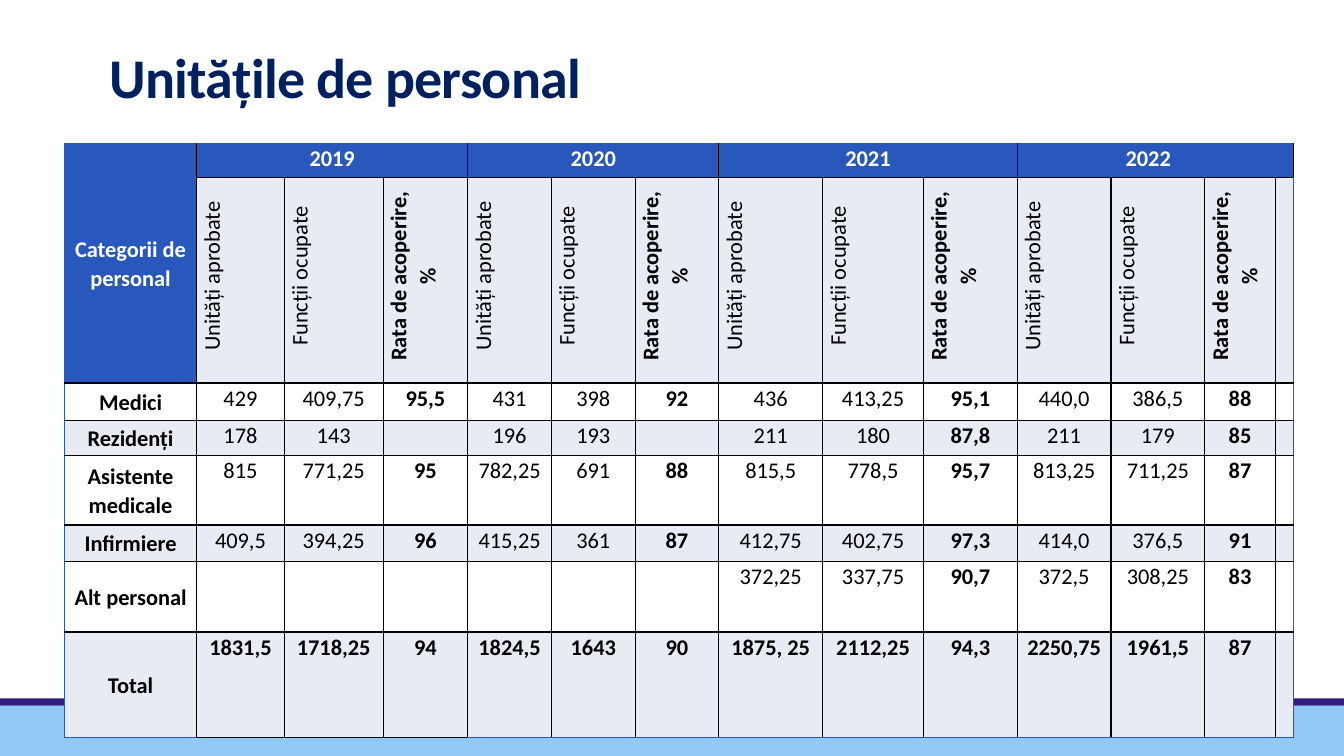
from lxml.etree import SubElement
from pptx import Presentation
from pptx.dml.color import RGBColor
from pptx.enum.shapes import MSO_SHAPE
from pptx.enum.text import MSO_ANCHOR, PP_ALIGN
from pptx.oxml.ns import qn
from pptx.util import Inches, Pt

COLORS = {
    "sky": "8FC9F4", "violet": "301D7D", "navy": "002060", "blue": "2958BD",
    "band": "E8EAF4", "white": "FFFFFF", "black": "000000",
}
COLUMN_WIDTHS = [1.31, 0.87, 0.98, 0.84, 0.83, 0.83, 0.83,
                 1.03, 1, 0.93, 0.93, 0.93, 0.7, 0.1]
ROW_HEIGHTS = [0.34, 2.04, 0.37, 0.35, 0.69, 0.36, 0.7, 1.05]
YEARS = ["2019", "2020", "2021", "2022"]
MEASURES = ["Unități aprobate", "Funcții ocupate", "Rata de acoperire, %"]
STAFF = [
    ["Medici", "429", "409,75", "95,5", "431", "398", "92",
     "436", "413,25", "95,1", "440,0", "386,5", "88"],
    ["Rezidenți", "178", "143", "", "196", "193", "",
     "211", "180", "87,8", "211", "179", "85"],
    ["Asistente medicale", "815", "771,25", "95", "782,25", "691", "88",
     "815,5", "778,5", "95,7", "813,25", "711,25", "87"],
    ["Infirmiere", "409,5", "394,25", "96", "415,25", "361", "87",
     "412,75", "402,75", "97,3", "414,0", "376,5", "91"],
    ["Alt personal", "", "", "", "", "", "",
     "372,25", "337,75", "90,7", "372,5", "308,25", "83"],
    ["Total", "1831,5", "1718,25", "94", "1824,5", "1643", "90",
     "1875, 25", "2112,25", "94,3", "2250,75", "1961,5", "87"],
]
LAST_ROW = len(ROW_HEIGHTS) - 1
LAST_COLUMN = len(COLUMN_WIDTHS) - 1


def rgb(name):
    return RGBColor.from_string(COLORS[name])


def write_text(frame, text, size=16, color="black", bold=False, align=PP_ALIGN.CENTER,
               line_spacing=1.07, space_after=8, indent=0, tracking=0):
    paragraph = frame.paragraphs[0]
    paragraph.alignment = align
    paragraph.line_spacing = line_spacing
    paragraph.space_after = Pt(space_after)
    run = paragraph.add_run()
    run.text = text
    run.font.name = "Calibri"
    run.font.size = Pt(size)
    run.font.bold = bold
    run.font.color.rgb = rgb(color)
    if indent:
        paragraph._p.get_or_add_pPr().set("marL", str(Inches(indent)))
    if tracking:
        run._r.get_or_add_rPr().set("spc", str(int(tracking * 100)))


def add_strip(slide, top, height, color):
    strip = slide.shapes.add_shape(
        MSO_SHAPE.RECTANGLE, 0, Inches(top), Inches(13.33), Inches(height))
    strip.shadow.inherit = False
    strip.fill.solid()
    strip.fill.fore_color.rgb = rgb(color)
    strip.line.fill.background()


def add_title(slide, text):
    box = slide.shapes.add_textbox(Inches(0.99), Inches(0.11), Inches(11), Inches(1.03))
    frame = box.text_frame
    frame.word_wrap = True
    frame.vertical_anchor = MSO_ANCHOR.BOTTOM
    write_text(frame, text, size=40, color="navy", bold=True, align=PP_ALIGN.LEFT,
               line_spacing=0.85, space_after=0, tracking=-0.5)


def set_borders(cell, row, column):
    # Outer edges are blue, except under the 2019 totals
    blue_edges = {
        "a:lnL": column == 0,
        "a:lnR": column == LAST_COLUMN,
        "a:lnT": row == 0,
        "a:lnB": row == LAST_ROW and column not in (1, 2, 3),
    }
    properties = cell._tc.get_or_add_tcPr()
    for tag, is_blue in blue_edges.items():
        line = SubElement(properties, qn(tag), w=str(Pt(1)))
        fill = SubElement(line, qn("a:solidFill"))
        SubElement(fill, qn("a:srgbClr"), val=COLORS["blue" if is_blue else "black"])


def style_cell(cell, row, column):
    set_borders(cell, row, column)
    is_header = row == 0 or (row == 1 and column == 0)
    cell.fill.solid()
    cell.fill.fore_color.rgb = rgb("blue" if is_header else "band" if row % 2 else "white")
    cell.margin_left = cell.margin_right = Inches(0.07)
    cell.margin_top = cell.margin_bottom = 0
    cell.vertical_anchor = MSO_ANCHOR.MIDDLE if column == 0 else MSO_ANCHOR.TOP


def add_staff_table(slide):
    table = slide.shapes.add_table(
        len(ROW_HEIGHTS), len(COLUMN_WIDTHS), Inches(0.64), Inches(1.42),
        Inches(sum(COLUMN_WIDTHS)), Inches(sum(ROW_HEIGHTS))).table
    table.first_row = table.horz_banding = False
    for column, width in zip(table.columns, COLUMN_WIDTHS):
        column.width = Inches(width)
    for row, height in zip(table.rows, ROW_HEIGHTS):
        row.height = Inches(height)
    for row in range(len(ROW_HEIGHTS)):
        for column in range(len(COLUMN_WIDTHS)):
            style_cell(table.cell(row, column), row, column)

    # Category heading and year headings
    table.cell(0, 0).merge(table.cell(1, 0))
    write_text(table.cell(0, 0).text_frame, "Categorii de personal", color="white", bold=True)
    for index, year in enumerate(YEARS):
        first = 1 + 3 * index
        last = LAST_COLUMN if year == YEARS[-1] else first + 2
        heading = table.cell(0, first)
        heading.merge(table.cell(0, last))
        if last == LAST_COLUMN:
            heading.margin_right = Inches(0.21)
        write_text(heading.text_frame, year, color="white", bold=True)

    # Vertical measure headings
    for column in range(1, LAST_COLUMN):
        cell = table.cell(1, column)
        cell._tc.get_or_add_tcPr().set("vert", "vert270")
        write_text(cell.text_frame, MEASURES[(column - 1) % 3],
                   bold=column % 3 == 0, indent=0.08)

    # Staff figures: names, rates and totals are bold
    for row, values in enumerate(STAFF, start=2):
        for column, value in enumerate(values):
            if value:
                write_text(table.cell(row, column).text_frame, value,
                           bold=column % 3 == 0 or row == LAST_ROW)


def main():
    presentation = Presentation()
    presentation.slide_width = Inches(13.33)
    presentation.slide_height = Inches(7.5)
    slide = presentation.slides.add_slide(presentation.slide_layouts[6])
    # Footer strips
    add_strip(slide, 7, 0.5, "sky")
    add_strip(slide, 6.93, 0.07, "violet")
    add_title(slide, "Unitățile de personal")
    add_staff_table(slide)
    presentation.save("out.pptx")


if __name__ == "__main__":
    main()
